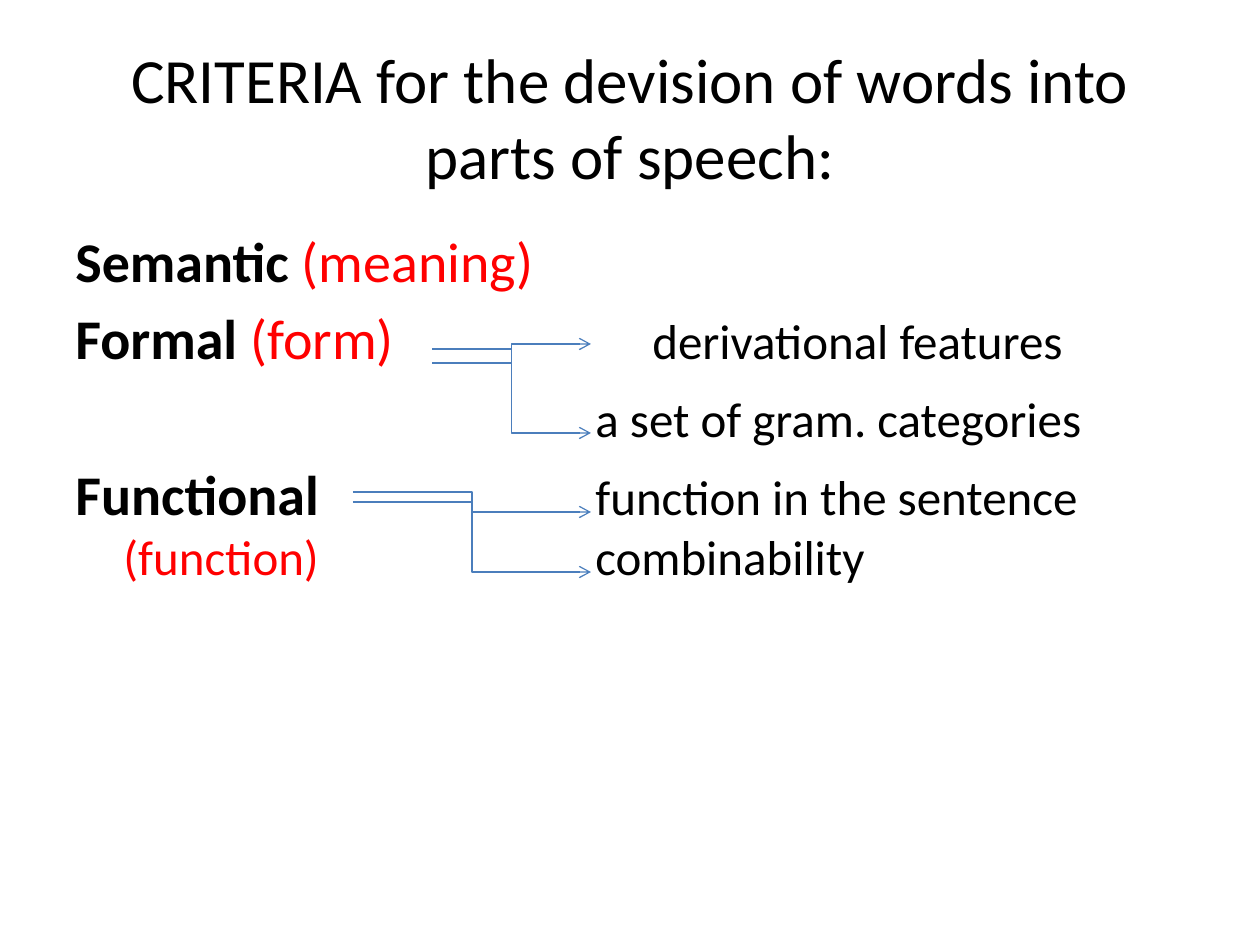
from lxml import etree
from pptx import Presentation
from pptx import util as u
from pptx.dml.color import RGBColor
from pptx.enum import shapes, text
from pptx.oxml import ns

BLACK, RED, BLUE = "000000", "FF0000", "4B7EBC"
FONT = "Calibri"

TITLE = "CRITERIA for the devision of words into parts of speech:"

# Each line: tab stops in px, then runs of (text, size, bold, colour)
CRITERIA = [
    ((), [("Semantic ", 32, True, BLACK), ("(meaning)", 32, False, RED)]),
    ((577,), [("Formal ", 32, True, BLACK), ("(form)\t", 32, False, RED),
              ("derivational features", 28, False, BLACK)]),
    ((520,), [("\t", 32, False, BLACK), ("a set of gram. categories", 28, False, BLACK)]),
    ((48, 520), [("Functional\t", 32, True, BLACK),
                 ("function in the sentence\v", 28, False, BLACK),
                 ("\t(function)\t", 28, False, RED),
                 ("combinability", 28, False, BLACK)]),
]

# Elbow arrows: start x, start y, end y; all end in one column
ARROW_END = 591
ARROWS = [(432, 363, 344), (432, 349, 433), (353, 492, 512), (353, 502, 572)]


def px(length):
    return u.Emu(round(length * 914400 / 126))


def colour(value):
    return RGBColor.from_string(value)


def add_text_box(slide, left, top, width, height, anchor):
    frame = slide.shapes.add_textbox(px(left), px(top), px(width), px(height)).text_frame
    frame.word_wrap = True
    frame.vertical_anchor = anchor
    return frame


def format_run(run, size, bold, value):
    run.font.name = FONT
    run.font.size = u.Pt(size)
    run.font.bold = bold
    run.font.color.rgb = colour(value)


def set_tab_stops(paragraph, stops):
    properties = paragraph._p.get_or_add_pPr()
    tab_list = etree.SubElement(properties, ns.qn("a:tabLst"))
    for stop in stops:
        etree.SubElement(tab_list, ns.qn("a:tab"), pos=str(px(stop)), algn="l")


def add_arrow(slide, left, start, end):
    connector = slide.shapes.add_connector(
        shapes.MSO_CONNECTOR.ELBOW, px(left), px(start), px(ARROW_END), px(end))
    connector.line.color.rgb = colour(BLUE)
    connector.line.width = u.Pt(0.75)
    etree.SubElement(connector.line._get_or_add_ln(), ns.qn("a:tailEnd"), type="arrow")
    etree.SubElement(connector._element.spPr, ns.qn("a:effectLst"))


def main():
    presentation = Presentation()
    presentation.slide_width, presentation.slide_height = px(1260), px(945)
    slide = presentation.slides.add_slide(presentation.slide_layouts[6])

    # Title
    title = add_text_box(slide, 63, 38, 1134, 157, text.MSO_ANCHOR.MIDDLE)
    title.text = TITLE
    title.paragraphs[0].alignment = text.PP_ALIGN.CENTER
    format_run(title.paragraphs[0].runs[0], 36, False, BLACK)

    # Criteria on the left, their features at the tab stops
    body = add_text_box(slide, 63, 220, 1134, 624, text.MSO_ANCHOR.TOP)
    for index, (stops, runs) in enumerate(CRITERIA):
        paragraph = body.add_paragraph() if index else body.paragraphs[0]
        paragraph.space_before = u.Pt(6)
        if stops:
            set_tab_stops(paragraph, stops)
        for content, size, bold, value in runs:
            run = paragraph.add_run()
            run.text = content.rstrip("\v")
            format_run(run, size, bold, value)
            if content.endswith("\v"):
                paragraph.add_line_break()

    # Arrows from the criteria to the features
    for arrow in ARROWS:
        add_arrow(slide, *arrow)

    presentation.save("out.pptx")


if __name__ == "__main__":
    main()
